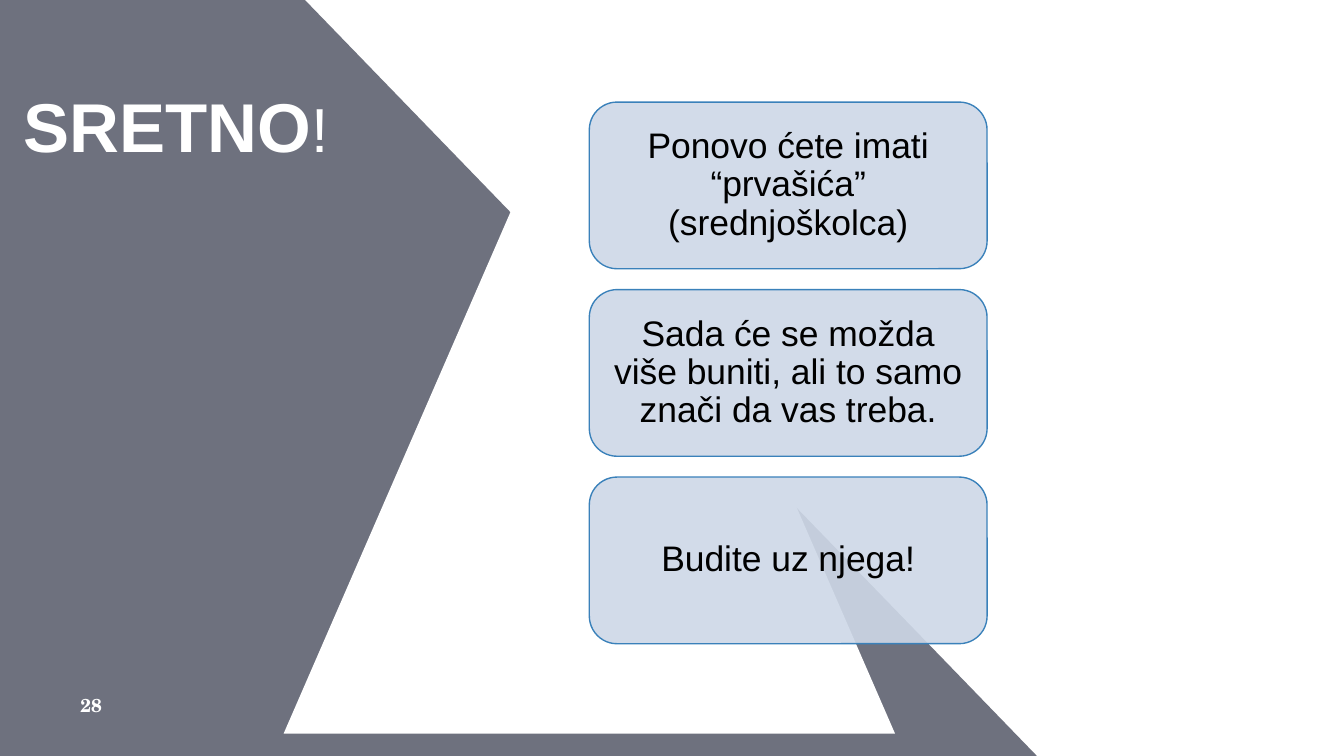
from lxml import etree
from pptx import Presentation
from pptx.dml.color import RGBColor as RGB
from pptx.enum.shapes import MSO_SHAPE as Kind
from pptx.enum.text import MSO_ANCHOR as Anchor, PP_ALIGN as Align
from pptx.oxml.ns import qn
from pptx.util import Inches, Pt

COLORS = {
    "band": "212539",
    "white": "FFFFFF",
    "card": "CED8E7",
    "edge": "3A81BA",
    "ink": "000000",
}
CARDS = [
    "Ponovo ćete imati “prvašića” (srednjoškolca)",
    "Sada će se možda više buniti, ali to samo znači da vas treba.",
    "Budite uz njega!",
]


def paint(shape, fill, alpha=100, line=None):
    """Set fill, opacity in percent, and outline."""
    shape.shadow.inherit = False
    shape.fill.solid()
    shape.fill.fore_color.rgb = RGB.from_string(COLORS[fill])
    if alpha < 100:
        tone = shape.fill._xPr.find(qn("a:solidFill"))[0]
        etree.SubElement(tone, qn("a:alpha"), val=str(alpha * 1000))
    if line:
        shape.line.color.rgb = RGB.from_string(COLORS[line])
        shape.line.width = Pt(0.75)
    else:
        shape.line.fill.background()


def write(shape, *runs, font="Arial", color="white", align=Align.LEFT,
          inset=(0.1, 0.05), space=1.0):
    """Fill a shape with one paragraph of (text, size, bold) runs."""
    frame = shape.text_frame
    frame.word_wrap = True
    frame.vertical_anchor = Anchor.MIDDLE
    frame.margin_left = frame.margin_right = Inches(inset[0])
    frame.margin_top = frame.margin_bottom = Inches(inset[1])
    para = frame.paragraphs[0]
    para.alignment = align
    para.line_spacing = space
    for text, size, bold in runs:
        run = para.add_run()
        run.text = text
        run.font.name = font
        run.font.size = Pt(size)
        run.font.bold = bold
        run.font.color.rgb = RGB.from_string(COLORS[color])


def add_box(slide, *rect):
    return slide.shapes.add_textbox(*map(Inches, rect))


def add_shape(slide, kind, *rect):
    return slide.shapes.add_shape(kind, *map(Inches, rect))


def add_band(slide):
    pen = slide.shapes.build_freeform(
        Inches(2.26), Inches(-0.01), scale=1.0)
    points = [(-0.01, -0.01), (-0.01, 5.64), (7.73, 5.64)]
    pen.add_line_segments([(Inches(x), Inches(y)) for x, y in points])
    paint(pen.convert_to_shape(), "band", alpha=65)


def add_card(slide, left, top, text):
    card = add_shape(slide, Kind.ROUNDED_RECTANGLE, left, top, 2.96, 1.24)
    paint(card, "card", alpha=90, line="edge")
    write(card, (text, 19, False), color="ink", align=Align.CENTER,
          inset=(0.08, 0.08), space=0.9)


def main():
    deck = Presentation()
    deck.slide_width = Inches(10)
    deck.slide_height = Inches(10 * 9 / 16)
    slide = deck.slides.add_slide(deck.slide_layouts[6])

    # Background band and slide number
    add_band(slide)
    write(add_box(slide, 0.5, 5.11, 0.6, 0.27), ("28", 10, True),
          font="TeX Gyre Schola", inset=(0.1, 0.1))

    # Pyramid, with cards that start at its axis
    left, width = 2.11, 4.55
    paint(add_shape(slide, Kind.ISOSCELES_TRIANGLE, left, 0.23, width, 5.23),
          "white")
    first, last = 0.76, 3.55
    step = (last - first) / (len(CARDS) - 1)
    for i, text in enumerate(CARDS):
        add_card(slide, left + width / 2, first + i * step, text)

    # Title
    write(add_box(slide, 0.08, 0.47, 2.48, 0.92),
          ("SRETNO", 37, True), ("!", 33.3, False))

    deck.save("out.pptx")


if __name__ == "__main__":
    main()
